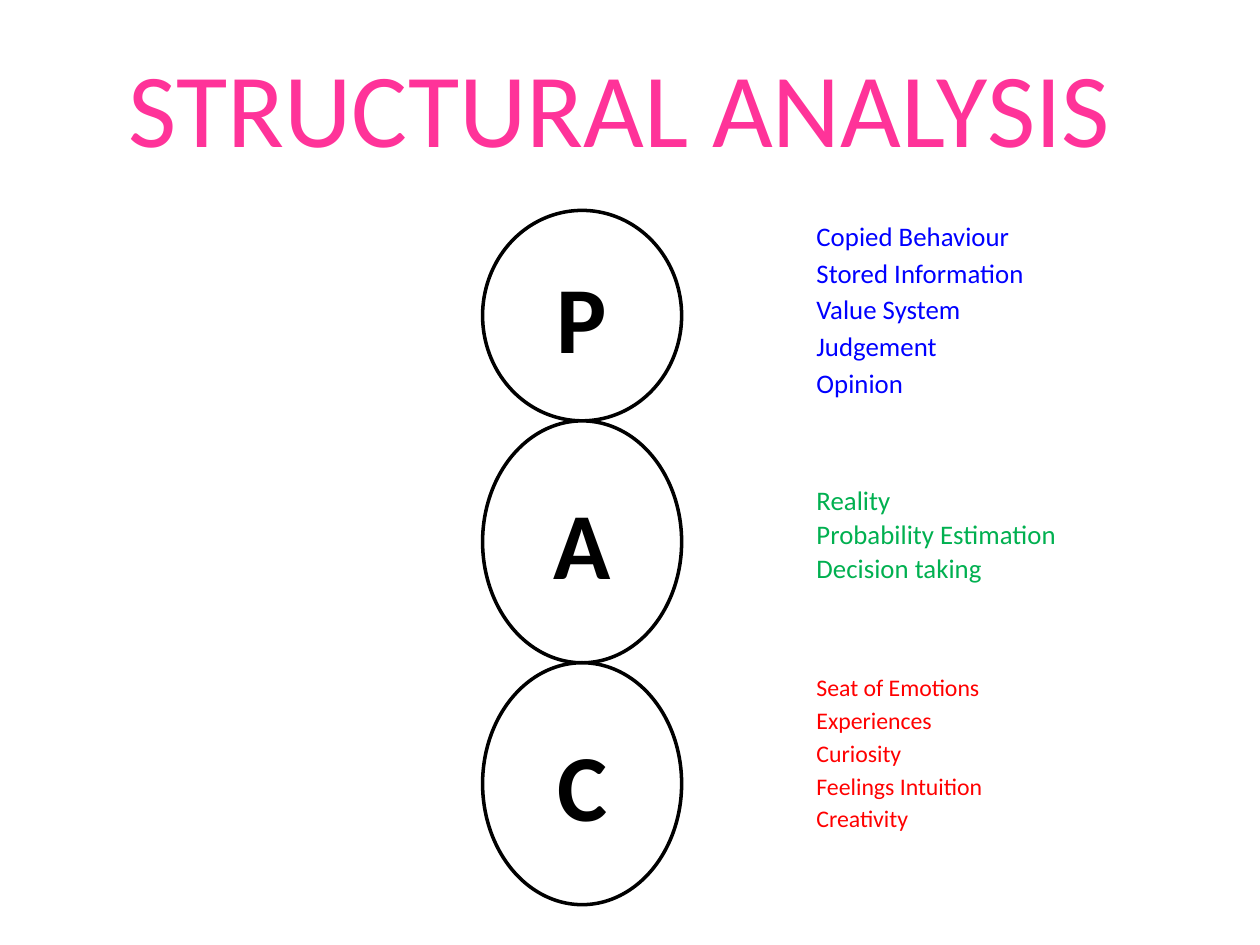
from lxml.etree import SubElement
from pptx import Presentation
from pptx.dml.color import RGBColor
from pptx.enum.shapes import MSO_SHAPE
from pptx.enum.text import MSO_ANCHOR, MSO_AUTO_SIZE, PP_ALIGN
from pptx.oxml.ns import qn
from pptx.util import Inches, Pt

PINK = RGBColor(0xFF, 0x33, 0x99)
BLUE = RGBColor(0x00, 0x00, 0xFF)
GREEN = RGBColor(0x00, 0xB0, 0x50)
RED = RGBColor(0xFF, 0x00, 0x00)
BLACK = RGBColor(0x00, 0x00, 0x00)
WHITE = RGBColor(0xFF, 0xFF, 0xFF)
FONT = "Calibri"
GROUP_GAP = Pt(50.6)
TEXT_INDENT = Inches(5.38)

EGO_STATES = [("P", 1.67), ("A", 1.92), ("C", 1.92)]
TRAIT_GROUPS = [
    (["Copied Behaviour", "Stored Information", "Value System", "Judgement", "Opinion"],
     BLUE, 15.3, 1.0),
    (["Reality", "Probability Estimation", "Decision taking"], GREEN, 15.3, 0.9),
    (["Seat of Emotions", "Experiences", "Curiosity", "Feelings Intuition", "Creativity"],
     RED, 13.6, 1.0),
]


def place(shape, left, top, width, height):
    """Move a shape to a box given in inches."""
    shape.left, shape.top = Inches(left), Inches(top)
    shape.width, shape.height = Inches(width), Inches(height)


def style(paragraph, size, color, bold=False):
    """Set the font of a whole paragraph."""
    font = paragraph.font
    font.name, font.size, font.bold = FONT, Pt(size), bold
    font.color.rgb = color


def add_title(slide, left, top, width, height):
    """Fill the title placeholder."""
    title = slide.shapes.title
    place(title, left, top, width, height)
    frame = title.text_frame
    frame.text = "STRUCTURAL ANALYSIS"
    frame.auto_size = MSO_AUTO_SIZE.NONE
    frame.vertical_anchor = MSO_ANCHOR.MIDDLE
    paragraph = frame.paragraphs[0]
    paragraph.alignment = PP_ALIGN.CENTER
    style(paragraph, 60, PINK)


def add_traits(slide, left, top, width, height):
    """List the traits of each ego state in the body placeholder."""
    body = slide.placeholders[1]
    place(body, left, top, width, height)
    frame = body.text_frame
    frame.auto_size = MSO_AUTO_SIZE.NONE
    frame.margin_top = Inches(0.32)
    frame.text = "\n".join(trait for traits, *_ in TRAIT_GROUPS for trait in traits)
    paragraphs = iter(frame.paragraphs)
    first_gap = Pt(0)
    for traits, color, size, spacing in TRAIT_GROUPS:
        for index, paragraph in zip(range(len(traits)), paragraphs):
            properties = paragraph._p.get_or_add_pPr()
            properties.set("marL", str(TEXT_INDENT))
            properties.set("indent", "0")
            SubElement(properties, qn("a:buNone"))
            paragraph.line_spacing = spacing
            paragraph.space_before = Pt(0.18 * size) if index else first_gap
            style(paragraph, size, color)
        first_gap = GROUP_GAP


def add_ego_states(slide, left, top, width):
    """Stack the touching ellipses of the ego states."""
    for letter, height in EGO_STATES:
        ellipse = slide.shapes.add_shape(
            MSO_SHAPE.OVAL, Inches(left), Inches(top), Inches(width), Inches(height))
        ellipse.shadow.inherit = False
        ellipse.fill.solid()
        ellipse.fill.fore_color.rgb = WHITE
        ellipse.line.color.rgb = BLACK
        ellipse.line.width = Pt(2)
        frame = ellipse.text_frame
        frame.text = letter
        frame.vertical_anchor = MSO_ANCHOR.MIDDLE
        paragraph = frame.paragraphs[0]
        paragraph.alignment = PP_ALIGN.CENTER
        style(paragraph, 54, BLACK, bold=True)
        top += height


def main():
    """Build and save the slide."""
    presentation = Presentation()
    presentation.slide_width, presentation.slide_height = Inches(10), Inches(7.5)
    slide = presentation.slides.add_slide(presentation.slide_layouts[1])
    add_title(slide, 0.42, 0.17, 9, 1.33)
    add_traits(slide, 1, 1.42, 8.08, 5.83)
    add_ego_states(slide, 3.83, 1.67, 1.58)
    presentation.save("out.pptx")


if __name__ == "__main__":
    main()
